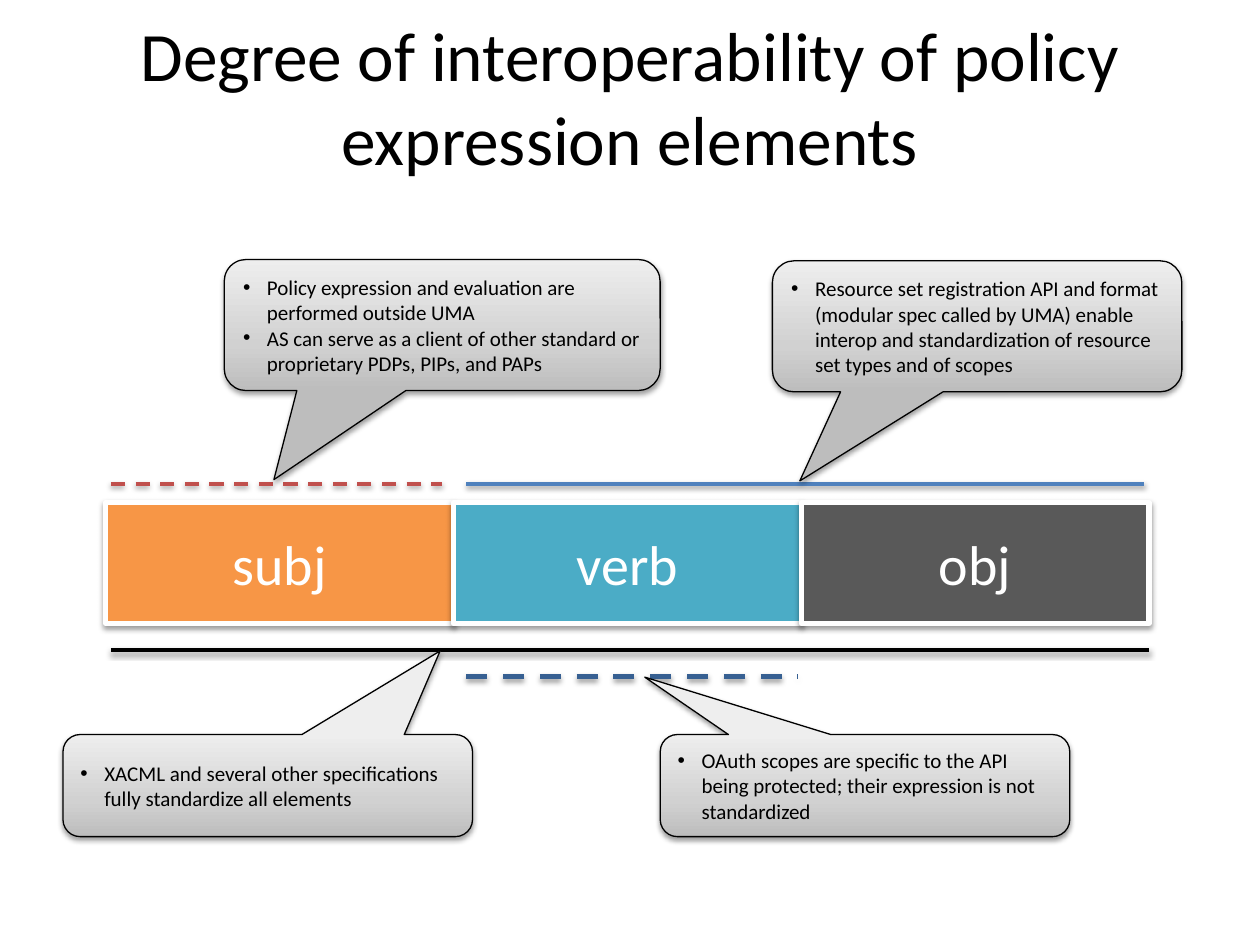
from lxml import etree
from pptx import Presentation
from pptx.dml.color import RGBColor
from pptx.enum.dml import MSO_LINE
from pptx.enum.shapes import MSO_CONNECTOR, MSO_SHAPE
from pptx.enum.text import MSO_ANCHOR, PP_ALIGN
from pptx.oxml.ns import qn
from pptx.util import Inches, Pt

RECTANGLE = MSO_SHAPE.RECTANGLE
CALLOUT = MSO_SHAPE.ROUNDED_RECTANGULAR_CALLOUT
STRAIGHT = MSO_CONNECTOR.STRAIGHT
DASH = MSO_LINE.DASH
MIDDLE = MSO_ANCHOR.MIDDLE
LEFT, CENTER = PP_ALIGN.LEFT, PP_ALIGN.CENTER

FONT = "Calibri"
BLACK, WHITE = "000000", "FFFFFF"
TITLE = "Degree of interoperability of policy expression elements"

# Policy elements, side by side: text, fill
ELEMENTS = [("subj", "F79646"), ("verb", "4BACC6"), ("obj", "595959")]
ELEMENT_LEFT, ELEMENT_TOP, ELEMENT_WIDTH, ELEMENT_HEIGHT = 0.84, 3.99, 2.76, 0.96

# Scope lines: start x, end x, y, colour, width, dash style
SCOPE_LINES = [
    (3.7, 9.08, 3.84, "4F81BD", 2, None),
    (0.88, 3.51, 3.84, "C0504D", 2, DASH),
    (3.7, 6.33, 5.37, "376092", 3, DASH),
    (0.88, 9.12, 5.16, BLACK, 2, None),
]

# Callouts: box (left, top, width, height), pointer offset from the centre, bullets
CALLOUTS = [
    ((6.13, 2.07, 3.25, 1.04), (-0.433, 1.18), [
        "Resource set registration API and format (modular spec called by UMA) "
        "enable interop and standardization of resource set types and of scopes"]),
    ((1.78, 2.06, 3.46, 1.04), (-0.386, 1.18), [
        "Policy expression and evaluation are performed outside UMA",
        "AS can serve as a client of other standard or proprietary PDPs, PIPs, and PAPs"]),
    ((5.24, 5.83, 3.25, 0.81), (-0.538, -1.063), [
        "OAuth scopes are specific to the API being protected; "
        "their expression is not standardized"]),
    ((0.5, 5.83, 3.25, 0.81), (0.421, -1.32), [
        "XACML and several other specifications fully standardize all elements"]),
]
CALLOUT_CORNER = 0.167
CALLOUT_GRADIENT = [(0, "BDBDBD"), (35, "D1D1D1"), (100, "EEEEEE")]
BULLET_INDENT = 0.19


def color(value):
    return RGBColor.from_string(value)


def add_element(parent, tag, **attributes):
    """Append a DrawingML child with the given attributes."""
    child = etree.SubElement(parent, qn(tag))
    for name, value in attributes.items():
        child.set(name, str(value))
    return child


def add_shadow(properties):
    """Cast a soft shadow straight down."""
    for old in properties.findall(qn("a:effectLst")):
        properties.remove(old)
    effects = add_element(properties, "a:effectLst")
    shadow = add_element(effects, "a:outerShdw", blurRad=Pt(3.1), dist=Pt(1.6),
                         dir=90 * 60000, rotWithShape=0)
    shade = add_element(shadow, "a:srgbClr", val=BLACK)
    add_element(shade, "a:alpha", val=38000)


def set_gradient(shape, stops):
    """Fill from the first stop at the bottom to the last at the top."""
    shape.fill.gradient()
    gradient = shape._element.spPr.find(qn("a:gradFill"))
    for child in list(gradient):
        gradient.remove(child)
    stop_list = add_element(gradient, "a:gsLst")
    for position, value in stops:
        stop = add_element(stop_list, "a:gs", pos=position * 1000)
        add_element(stop, "a:srgbClr", val=value)
    add_element(gradient, "a:lin", ang=270 * 60000, scaled=0)


def set_line(line, value, width):
    line.color.rgb = color(value)
    line.width = Pt(width)


def write_text(shape, texts, size, value, alignment, bulleted=False):
    frame = shape.text_frame
    frame.word_wrap = True
    frame.vertical_anchor = MIDDLE
    for index, text in enumerate(texts):
        paragraph = frame.add_paragraph() if index else frame.paragraphs[0]
        paragraph.alignment = alignment
        if bulleted:
            properties = paragraph._p.get_or_add_pPr()
            properties.set("marL", str(Inches(BULLET_INDENT)))
            properties.set("indent", str(-Inches(BULLET_INDENT)))
            add_element(properties, "a:buFont", typeface="Arial")
            add_element(properties, "a:buChar", char="•")
        run = paragraph.add_run()
        run.text = text
        run.font.name = FONT
        run.font.size = Pt(size)
        run.font.color.rgb = color(value)


def add_policy_element(slide, index, text, fill):
    left = ELEMENT_LEFT + index * ELEMENT_WIDTH
    box = (left, ELEMENT_TOP, ELEMENT_WIDTH, ELEMENT_HEIGHT)
    shape = slide.shapes.add_shape(RECTANGLE, *map(Inches, box))
    shape.fill.solid()
    shape.fill.fore_color.rgb = color(fill)
    set_line(shape.line, WHITE, 3)
    add_shadow(shape._element.spPr)
    write_text(shape, [text], 32, WHITE, CENTER)


def add_scope_line(slide, start, end, y, value, width, dash):
    connector = slide.shapes.add_connector(STRAIGHT, *map(Inches, (start, y, end, y)))
    set_line(connector.line, value, width)
    if dash:
        connector.line.dash_style = dash
    add_shadow(connector._element.spPr)


def add_callout(slide, box, pointer, bullets):
    shape = slide.shapes.add_shape(CALLOUT, *map(Inches, box))
    for index, value in enumerate((*pointer, CALLOUT_CORNER)):
        shape.adjustments[index] = value
    set_gradient(shape, CALLOUT_GRADIENT)
    set_line(shape.line, BLACK, 0.75)
    add_shadow(shape._element.spPr)
    write_text(shape, bullets, 12, BLACK, LEFT, bulleted=True)


def main():
    presentation = Presentation()
    presentation.slide_width, presentation.slide_height = Inches(10), Inches(7.5)
    slide = presentation.slides.add_slide(presentation.slide_layouts[6])

    title = slide.shapes.add_textbox(*map(Inches, (0.5, 0.3, 9, 0.92)))
    write_text(title, [TITLE], 39.6, BLACK, CENTER)
    for index, (text, fill) in enumerate(ELEMENTS):
        add_policy_element(slide, index, text, fill)
    for scope_line in SCOPE_LINES:
        add_scope_line(slide, *scope_line)
    for callout in CALLOUTS:
        add_callout(slide, *callout)

    presentation.save("out.pptx")


if __name__ == "__main__":
    main()
